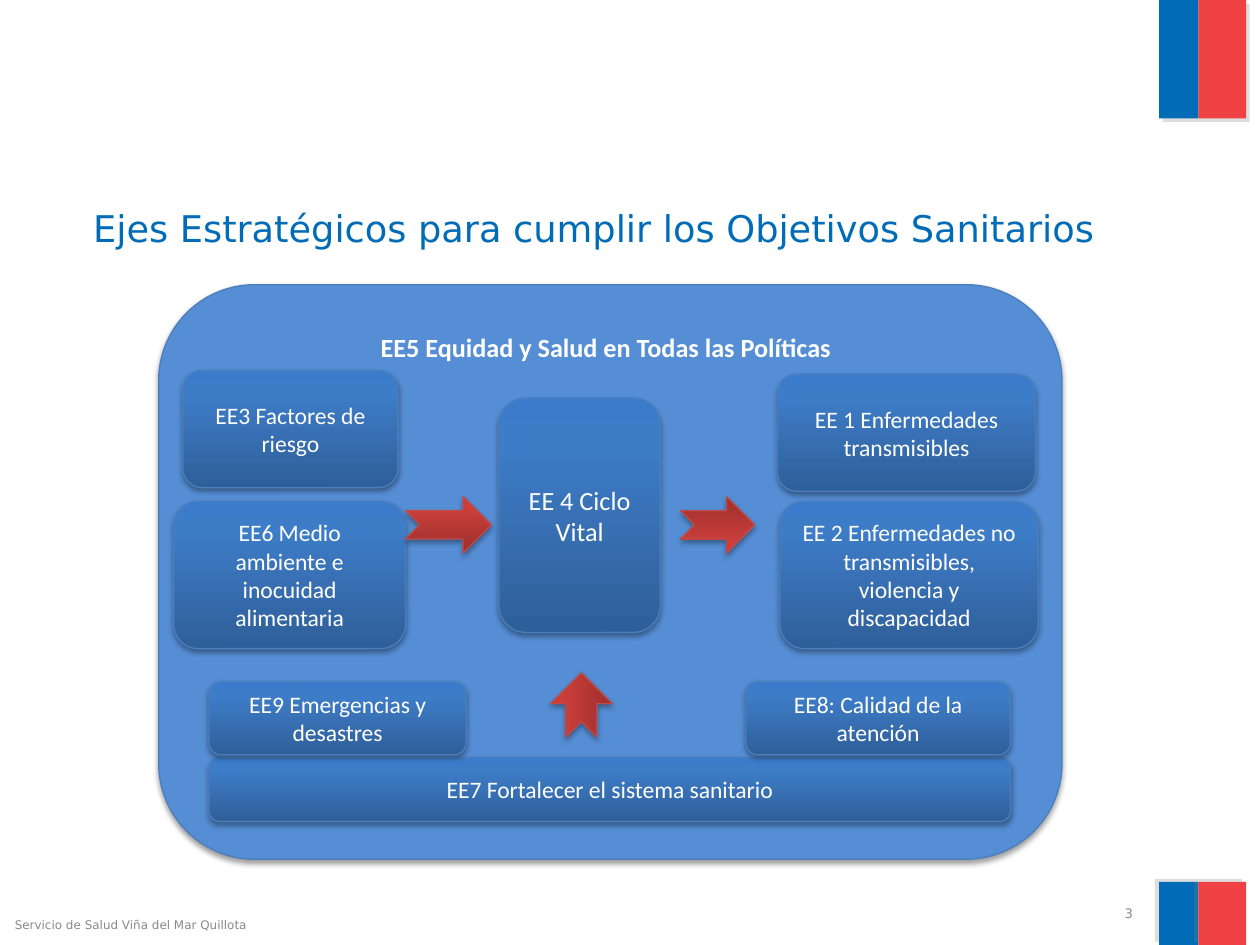
from copy import deepcopy

from pptx import Presentation
from pptx.dml.color import RGBColor
from pptx.enum.shapes import MSO_SHAPE as Shape
from pptx.enum.text import MSO_ANCHOR as Anchor, PP_ALIGN as Align
from pptx.oxml import parse_xml
from pptx.oxml.ns import nsdecls, qn
from pptx.util import Pt

WHITE = RGBColor(0xFF, 0xFF, 0xFF)
GREY = RGBColor(0x89, 0x89, 0x89)
BLUE = RGBColor(0x00, 0x6C, 0xB7)
RED = RGBColor(0xEF, 0x41, 0x44)
SKY = RGBColor(0x55, 0x8E, 0xD5)
EDGE = RGBColor(0x4B, 0x7E, 0xBC)
RIM = RGBColor(0xBF, 0x4C, 0x48)
NAVY = (RGBColor(0x2F, 0x5F, 0x99), RGBColor(0x3D, 0x7C, 0xC7), RGBColor(0x3A, 0x7C, 0xCB))
BRICK = (RGBColor(0x9C, 0x2F, 0x2D), RGBColor(0xCB, 0x3E, 0x3A), RGBColor(0xCE, 0x3B, 0x37))
STOPS = (0, 0.8, 1)

SOFT = ("000000", 35, 3.1, 1.8, 90)
DEEP = ("000000", 38, 3.1, 1.6, 90)

HEAD = {"name": "DejaVu Sans", "size": Pt(21)}
FOOT = {"name": "DejaVu Sans", "size": Pt(6.8)}
PAGE = {"name": "DejaVu Sans", "size": Pt(7.5)}
BODY = {"name": "Calibri", "size": Pt(13.5)}
CORE = {"name": "Calibri", "size": Pt(15)}
BOLD = {**CORE, "bold": True}

AXES = [
    ("EE3 Factores de riesgo", (13.7, 49, 123.1, 67), BODY),
    ("EE 4 Ciclo Vital", (194.4, 64.8, 92.2, 133.9), CORE),
    ("EE 1 Enfermedades transmisibles", (353.5, 51.1, 147.6, 67), BODY),
    ("EE 2 Enfermedades no transmisibles, violencia y discapacidad",
     (355, 123.8, 147.6, 84.2), BODY),
    ("EE7 Fortalecer el sistema sanitario", (28.8, 270, 457.9, 36.7), BODY),
    ("EE8: Calidad de la atención", (335.5, 226.8, 151.2, 41.8), BODY),
    ("EE9 Emergencias y desastres", (28.8, 226.8, 146.9, 41.8), BODY),
    ("EE6 Medio ambiente e inocuidad alimentaria", (8.6, 123.8, 132.5, 84.2), BODY),
]
ARROWS = [
    ((141.1, 121, 49, 32.4), 0, False),
    ((298.1, 121, 42.5, 32.4), 180, True),
    ((223.2, 222.5, 36.7, 35.3), 270, False),
]


def inside(box, part):
    """Return the part's lengths, moved to the corner of the box."""
    x, y, w, h = part
    return [Pt(n) for n in (box[0] + x, box[1] + y, w, h)]


def shade(shape, tone, alpha, blur, dist, angle):
    """Give a shape an outer shadow."""
    shape._element.spPr.append(parse_xml(
        f'<a:effectLst {nsdecls("a")}><a:outerShdw blurRad="{Pt(blur)}" dist="{Pt(dist)}" '
        f'dir="{angle * 60000}" algn="ctr" rotWithShape="0"><a:srgbClr val="{tone}">'
        f'<a:alpha val="{alpha * 1000}"/></a:srgbClr></a:outerShdw></a:effectLst>'))


def blend(shape, tones):
    """Fill a shape with a three-stop upward gradient."""
    fill = shape.fill
    fill.gradient()
    fill.gradient_angle = 90
    stops = shape._element.spPr.find(qn("a:gradFill")).find(qn("a:gsLst"))
    stops.append(deepcopy(stops[-1]))
    for stop, tone, place in zip(fill.gradient_stops, tones, STOPS):
        stop.color.rgb = tone
        stop.position = place


def trace(shape, color):
    """Draw a thin outline."""
    shape.line.color.rgb = color
    shape.line.width = Pt(0.75)


def write(shape, text, form, color, align=Align.CENTER, anchor=Anchor.MIDDLE):
    """Put one formatted paragraph in a shape."""
    frame = shape.text_frame
    frame.word_wrap = True
    frame.vertical_anchor = anchor
    para = frame.paragraphs[0]
    para.text = text
    para.alignment = align
    for key, value in form.items():
        setattr(para.font, key, value)
    para.font.color.rgb = color


def label(shapes, box, *args):
    """Add a text box."""
    write(shapes.add_textbox(*[Pt(n) for n in box]), *args)


def flag(shapes, box, angle):
    """Draw a two-tone band that fills the box."""
    x, y, w, h = box
    split = w * 0.45
    for left, wide, color in ((0, split, BLUE), (split, w - split, RED)):
        band = shapes.add_shape(Shape.RECTANGLE, *inside(box, (left, 0, wide, h)))
        band.fill.solid()
        band.fill.fore_color.rgb = color
        band.line.fill.background()
        shade(band, "808080", 25, 0, 3, angle)


def axis(shapes, box, part, text, form):
    """Draw one strategic axis as a rounded box."""
    shape = shapes.add_shape(Shape.ROUNDED_RECTANGLE, *inside(box, part))
    blend(shape, NAVY)
    trace(shape, EDGE)
    shade(shape, *SOFT)
    write(shape, text, form, WHITE)


def arrow(shapes, box, part, turn, flip):
    """Draw one notched arrow."""
    shape = shapes.add_shape(Shape.NOTCHED_RIGHT_ARROW, *inside(box, part))
    shape.rotation = turn
    if flip:
        shape._element.spPr.xfrm.set("flipH", "1")
    blend(shape, BRICK)
    trace(shape, RIM)
    shade(shape, *SOFT)


def panel(slide, box):
    """Draw the diagram of axes as one group."""
    shapes = slide.shapes.add_group_shape().shapes
    back = shapes.add_shape(Shape.ROUNDED_RECTANGLE, *[Pt(n) for n in box])
    back.fill.solid()
    back.fill.fore_color.rgb = SKY
    trace(back, EDGE)
    shade(back, *DEEP)
    for text, part, form in AXES:
        axis(shapes, box, part, text, form)
    for part, turn, flip in ARROWS:
        arrow(shapes, box, part, turn, flip)
    x, y, w, h = box
    label(shapes, (x + 38.9, y + 23, 433.4, 31.7),
          "EE5 Equidad y Salud en Todas las Políticas", BOLD, WHITE, Align.CENTER, Anchor.TOP)


def main():
    """Build and save the slide."""
    deck = Presentation()
    deck.slide_width, deck.slide_height = Pt(720), Pt(540)
    slide = deck.slides.add_slide(deck.slide_layouts[6])
    shapes = slide.shapes
    flag(shapes, (662.4, 0, 49.7, 67.7), 45)
    flag(shapes, (662.4, 504, 49.7, 36), 215)
    label(shapes, (18, 105.8, 643, 49),
          "Ejes Estratégicos para cumplir los Objetivos Sanitarios", HEAD, BLUE)
    panel(slide, (90.7, 162.7, 516.2, 328.3))
    label(shapes, (1.4, 514.1, 227.5, 28.8),
          "Servicio de Salud Viña del Mar Quillota", FOOT, GREY, Align.LEFT)
    label(shapes, (486.7, 511.9, 167.8, 19.4), "3", PAGE, GREY, Align.RIGHT)
    deck.save("out.pptx")


if __name__ == "__main__":
    main()
